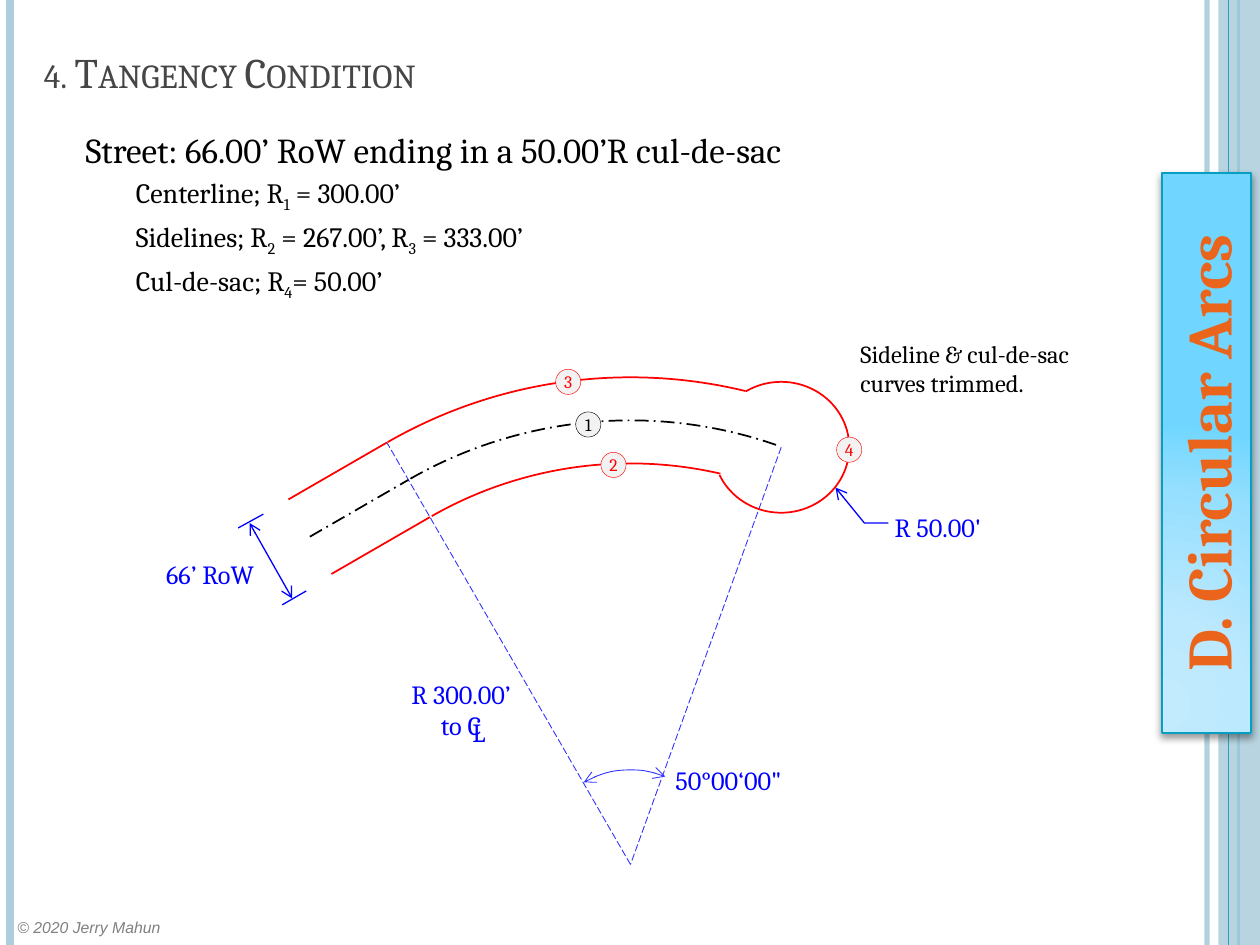
import math
from dataclasses import dataclass
from lxml import etree
from pptx import Presentation
from pptx import util as u
from pptx.dml.color import RGBColor
from pptx.enum import dml, shapes, text
from pptx.oxml import parse_xml
from pptx.oxml.ns import nsdecls, qn

COLORS = {
    "band": "ADCEDC", "teal": "2DA2BF", "tab_line": "079EC3", "tab_text": "EB641B",
    "title": "464646", "footer": "808080", "black": "000000", "red": "FF0000",
    "blue": "0000FF", "radial": "3333FF", "badge": "F2F2F2",
}
TAB_STOPS = [(0, "C2EBFD"), (30, "BCE9FE"), (75, "96DFFE"), (100, "70D6FF")]
DASH, DASH_DOT = dml.MSO_LINE.LONG_DASH, dml.MSO_LINE.LONG_DASH_DOT
LEFT, CENTER = text.PP_ALIGN.LEFT, text.PP_ALIGN.CENTER

# Road geometry, in points and degrees (clockwise from east)
CENTRE = (360.3, 494)
TANGENT_ANGLE = 240
RADIUS, HALF_WIDTH, TANGENT_LENGTH = 253.8, 24.6, 65


@dataclass
class Pen:
    color: str
    width: float
    dash: object = None
    ends: tuple = ()


@dataclass
class Label:
    words: str
    left: float
    top: float
    width: float
    height: float
    size: float = 15
    color: str = "blue"
    align: object = LEFT


@dataclass
class Arc:
    radius: float
    start: float
    end: float
    pen: Pen


@dataclass
class Badge:
    number: int
    left: float
    top: float
    color: str = "red"


RED = Pen("red", 1)
CENTERLINE = Pen("black", 1, DASH_DOT)
DIMENSION = Pen("blue", 0.75)
RADIAL = Pen("radial", 0.5, DASH)


def rgb(name: str) -> RGBColor:
    return RGBColor.from_string(COLORS[name])


def polar(radius: float, angle: float) -> tuple:
    turn = math.radians(angle)
    return CENTRE[0] + radius * math.cos(turn), CENTRE[1] + radius * math.sin(turn)


def set_alpha(element, percent: int) -> None:
    for color in element.iter(qn("a:srgbClr")):
        etree.SubElement(color, qn("a:alpha")).set("val", str(percent * 1000))


def apply_pen(line, pen: Pen) -> None:
    line.color.rgb = rgb(pen.color)
    line.width = u.Pt(pen.width)
    if pen.dash:
        line.dash_style = pen.dash
    for end in pen.ends:
        etree.SubElement(line._get_or_add_ln(), qn(f"a:{end}")).set("type", "arrow")


def add_line(slide, start: tuple, end: tuple, pen: Pen):
    line = slide.shapes.add_connector(
        shapes.MSO_CONNECTOR.STRAIGHT, *(u.Pt(value) for value in (*start, *end)))
    apply_pen(line.line, pen)
    etree.SubElement(line._element.spPr, qn("a:effectLst"))
    return line


def add_shape(slide, kind, left: float, top: float, width: float, height: float):
    shape = slide.shapes.add_shape(
        kind, *(u.Pt(value) for value in (left, top, width, height)))
    shape.shadow.inherit = False
    return shape


def add_arc(slide, centre: tuple, radii: tuple, start: float, end: float, pen: Pen) -> None:
    shape = add_shape(slide, shapes.MSO_SHAPE.ARC, centre[0] - radii[0],
                      centre[1] - radii[1], 2 * radii[0], 2 * radii[1])
    shape.fill.background()
    for index, angle in enumerate((start, end)):
        shape.adjustments[index] = angle * 0.6  # 60000ths of a degree over 100000
    apply_pen(shape.line, pen)


def format_text(frame, size: float, color: str, align=LEFT, font="Cambria") -> None:
    for paragraph in frame.paragraphs:
        paragraph.alignment = align
        for run in paragraph.runs:
            run.font.name = font
            run.font.size = u.Pt(size)
            run.font.color.rgb = rgb(color)


def clear_margins(frame) -> None:
    frame.margin_left = frame.margin_right = frame.margin_top = frame.margin_bottom = 0


def add_label(slide, label: Label, font="Cambria", wrap=False, margins=False):
    box = slide.shapes.add_textbox(
        *(u.Pt(value) for value in (label.left, label.top, label.width, label.height)))
    frame = box.text_frame
    frame.word_wrap = wrap
    frame.text = label.words
    if not margins:
        clear_margins(frame)
    format_text(frame, label.size, label.color, label.align, font)
    return frame


def add_badge(slide, badge: Badge) -> None:
    shape = add_shape(slide, shapes.MSO_SHAPE.OVAL, badge.left, badge.top, 14.4, 14.4)
    shape.fill.solid()
    shape.fill.fore_color.rgb = rgb("badge")
    apply_pen(shape.line, Pen(badge.color, 0.25))
    frame = shape.text_frame
    clear_margins(frame)
    frame.word_wrap = False
    frame.vertical_anchor = text.MSO_ANCHOR.MIDDLE
    frame.text = str(badge.number)
    format_text(frame, 10, badge.color, CENTER)


def add_frame(slide) -> None:
    # Vertical bands at both edges
    wide = add_line(slide, (689.8, 0), (689.8, 540), Pen("band", 3))
    set_alpha(wide._element.spPr, 93)
    add_line(slide, (5.8, 0), (5.8, 540), Pen("band", 4.5))
    add_line(slide, (707.8, 0), (707.8, 540), Pen("teal", 1.5))
    band = add_shape(slide, shapes.MSO_SHAPE.RECTANGLE, 696.2, 0, 23.8, 540)
    band.fill.solid()
    band.fill.fore_color.rgb = rgb("band")
    band.line.fill.background()
    set_alpha(band._element.spPr, 87)
    add_line(slide, (702, 0), (702, 540), Pen("teal", 0.75))

    footer = add_label(slide, Label("© 2020 Jerry Mahun", 2.9, 520.6, 103.7, 18, 9, "footer"),
                       "Arial", margins=True)
    footer.paragraphs[0].runs[0].font.italic = True

    # Chapter tab
    tab = add_shape(slide, shapes.MSO_SHAPE.RECTANGLE, 529.2, 233.3, 320.4, 51.1)
    tab.rotation = 270
    tab.fill.solid()
    apply_pen(tab.line, Pen("tab_line", 1))
    properties = tab._element.spPr
    stops = "".join(f'<a:gs pos="{position * 1000}"><a:srgbClr val="{color}"/></a:gs>'
                    for position, color in TAB_STOPS)
    properties.replace(properties.find(qn("a:solidFill")), parse_xml(
        f'<a:gradFill {nsdecls("a")} rotWithShape="1"><a:gsLst>{stops}</a:gsLst>'
        '<a:path path="circle"><a:fillToRect l="5000" t="100000" r="120000" b="10000"/>'
        '</a:path></a:gradFill>'))
    properties.find(qn("a:effectLst")).append(parse_xml(
        f'<a:outerShdw {nsdecls("a")} blurRad="50800" dist="25400" dir="5400000" '
        'rotWithShape="0"><a:srgbClr val="000000"><a:alpha val="40000"/></a:srgbClr>'
        '</a:outerShdw>'))
    frame = tab.text_frame
    frame.word_wrap = False
    frame.vertical_anchor = text.MSO_ANCHOR.MIDDLE
    frame.text = "D. Circular Arcs"
    format_text(frame, 36, "tab_text", CENTER)
    frame.paragraphs[0].runs[0].font.bold = True


def add_heading_and_data(slide) -> None:
    title = add_label(slide, Label("4. Tangency Condition", 18, 21.6, 606.2, 37.4, 24, "title"),
                      wrap=True, margins=True)
    title.vertical_anchor = text.MSO_ANCHOR.BOTTOM
    title.paragraphs[0].runs[0].font._element.set("cap", "small")

    body = add_label(slide, Label("Street: 66.00’ RoW ending in a 50.00’R cul-de-sac",
                                  41.8, 69.8, 581.8, 439.9, 20, "black"), wrap=True, margins=True)
    body.paragraphs[0].space_before = u.Pt(6)
    # Odd pieces of each line are subscripts
    for pieces in (("Centerline; R", "1", " = 300.00’"),
                   ("Sidelines; R", "2", " = 267.00’, R", "3", " = 333.00’"),
                   ("Cul-de-sac; R", "4", "= 50.00’")):
        paragraph = body.add_paragraph()
        paragraph.level = 1
        paragraph.space_before = u.Pt(3.2)
        paragraph._p.get_or_add_pPr().set("marL", str(u.Pt(28.8)))
        for index, piece in enumerate(pieces):
            run = paragraph.add_run()
            run.text = piece
            run.font.name, run.font.size = "Cambria", u.Pt(16)
            run.font.color.rgb = rgb("black")
            if index % 2:
                run.font._element.set("baseline", "-25000")


def add_street(slide) -> None:
    # Radial lines
    add_line(slide, (446.4, 255.6), CENTRE, RADIAL)
    add_line(slide, CENTRE, polar(RADIUS + HALF_WIDTH, TANGENT_ANGLE), RADIAL)

    # Curves, each with the tangent leading into it
    for arc in (Arc(RADIUS - HALF_WIDTH, 240.3, 282.96, RED),
                Arc(RADIUS, 240.3, 289.62, CENTERLINE),
                Arc(RADIUS + HALF_WIDTH, 240.1, 283.65, RED)):
        add_arc(slide, CENTRE, (arc.radius, arc.radius), arc.start, arc.end, arc.pen)
        x, y = polar(arc.radius, TANGENT_ANGLE)
        turn = math.radians(TANGENT_ANGLE - 90)
        start = (x + TANGENT_LENGTH * math.cos(turn), y + TANGENT_LENGTH * math.sin(turn))
        add_line(slide, start, (x, y), arc.pen)
    add_arc(slide, (446.4, 255.6), (38.9, 37.4), 237.45, 155.71, RED)

    # Dimensions
    both = ("headEnd", "tailEnd")
    add_arc(slide, CENTRE, (54, 54), 240.34, 291.61, Pen("radial", 0.5, ends=both))
    add_line(slide, (142.6, 298.8), (167, 342), Pen("blue", 0.75, ends=both))
    for start, end in (((175, 337.7), (161.3, 345.6)), ((150.5, 293.8), (136.1, 301.7))):
        add_line(slide, start, end, DIMENSION)
    builder = slide.shapes.build_freeform(u.Pt(477.4), u.Pt(278.6))
    builder.add_line_segments([(u.Pt(493.9), u.Pt(298.8)), (u.Pt(507.6), u.Pt(298.8))], close=False)
    leader = builder.convert_to_shape()
    leader.shadow.inherit = False
    leader.fill.background()
    apply_pen(leader.line, Pen("blue", 0.75, ends=("headEnd",)))

    for label in (Label("R 50.00'", 511.2, 292.3, 56.2, 18),
                  Label("66’ RoW", 95, 319, 57.6, 18),
                  Label("R 300.00’\vto C", 231.1, 387.4, 64.8, 36, align=CENTER),
                  Label("L", 270, 409, 10.1, 18),
                  Label("50°00‘00\"", 385.9, 437, 65.5, 18)):
        add_label(slide, label)
    for badge in (Badge(1, 329, 235.4, "black"), Badge(2, 343.4, 258.5),
                  Badge(3, 317.5, 211), Badge(4, 478.1, 249.8)):
        add_badge(slide, badge)
    add_label(slide, Label("Sideline & cul-de-sac\ncurves trimmed.",
                           484.6, 190.1, 151.2, 41, 14, "black"), margins=True)


def main() -> None:
    presentation = Presentation()
    presentation.slide_width, presentation.slide_height = u.Pt(720), u.Pt(540)
    slide = presentation.slides.add_slide(presentation.slide_layouts[6])
    add_frame(slide)
    add_heading_and_data(slide)
    add_street(slide)
    presentation.save("out.pptx")


if __name__ == "__main__":
    main()
